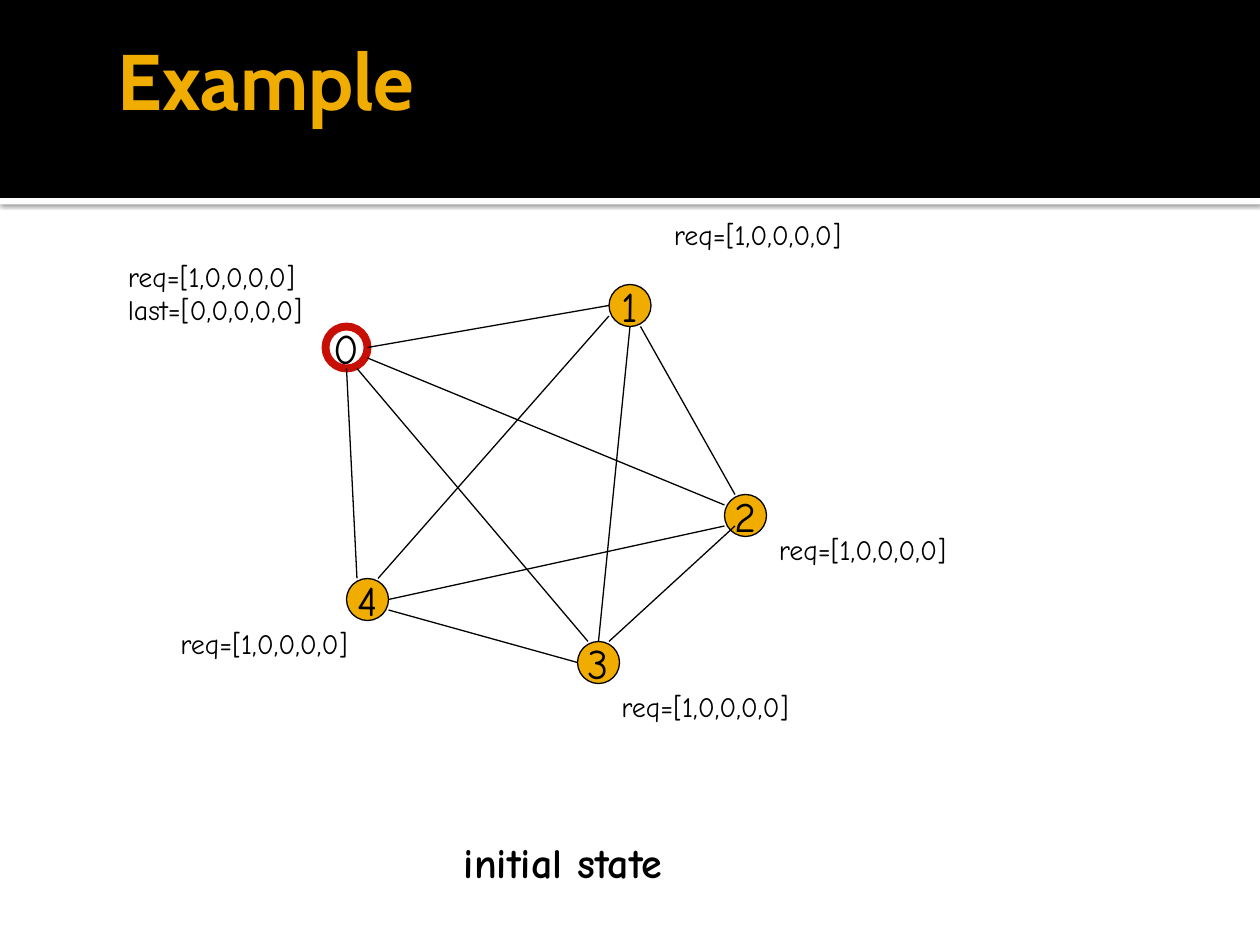
from lxml.etree import SubElement
from pptx import Presentation
from pptx.dml.color import RGBColor
from pptx.enum.shapes import MSO_CONNECTOR, MSO_SHAPE
from pptx.enum.text import MSO_ANCHOR, MSO_AUTO_SIZE, PP_ALIGN
from pptx.oxml.ns import qn
from pptx.util import Cm, Pt

COLORS = {"black": "000000", "white": "FFFFFF", "gold": "F0AD00", "red": "C70F05"}
STEP = 2.54 / 12  # drawing grid, in cm
DROP = 0.02       # the drawing sits slightly below the grid


def color(name):
    return RGBColor.from_string(COLORS[name])


def grid(column, row):
    return Cm(column * STEP), Cm(row * STEP + DROP)


class SlideBuilder:
    body_font = "Comic Neue"
    title_font = "Cabin"

    def __init__(self, page):
        self.page = page

    def add_lines(self, frame, lines, size, ink="black", align=PP_ALIGN.LEFT, **font_values):
        for index, line in enumerate(lines):
            para = frame.paragraphs[0] if index == 0 else frame.add_paragraph()
            para.alignment = align
            span = para.add_run()
            span.text = line
            span.font.color.rgb = color(ink)
            values = {"name": self.body_font, "size": Pt(size), **font_values}
            for name, value in values.items():
                setattr(span.font, name, value)

    def shape(self, kind, left, top, width, height, fill):
        shape = self.page.shapes.add_shape(kind, left, top, width, height)
        shape.shadow.inherit = False
        shape.line.fill.background()
        if fill:
            shape.fill.solid()
            shape.fill.fore_color.rgb = color(fill)
        else:
            shape.fill.background()
        return shape

    def band(self, top, height, fill):
        return self.shape(MSO_SHAPE.RECTANGLE, 0, Cm(top), Cm(25.4), Cm(height), fill)

    def drop_shadow(self, shape):
        effects = shape._element.spPr.find(qn("a:effectLst"))
        shadow = SubElement(effects, qn("a:outerShdw"), blurRad=str(Pt(2.5)),
                            dist=str(Pt(0.8)), dir="5400000", rotWithShape="0")
        ink = SubElement(shadow, qn("a:srgbClr"), val=COLORS["black"])
        SubElement(ink, qn("a:alpha"), val="60000")

    def node(self, name, column, row, fill="gold", outline="black", weight=0.75):
        side = Cm(4 * STEP)
        circle = self.shape(MSO_SHAPE.OVAL, *grid(column, row), side, side, fill)
        circle.line.color.rgb = color(outline)
        circle.line.width = Pt(weight)
        frame = circle.text_frame
        frame.word_wrap = False
        frame.vertical_anchor = MSO_ANCHOR.MIDDLE
        self.add_lines(frame, [name], 24, align=PP_ALIGN.CENTER)

    def edge(self, start, end):
        line = self.page.shapes.add_connector(
            MSO_CONNECTOR.STRAIGHT, *grid(*start), *grid(*end))
        line.line.color.rgb = color("black")
        line.line.width = Pt(0.75)
        SubElement(line._element.spPr, qn("a:effectLst"))

    def label(self, lines, column, row, width, height, size=16, wrap=False, **font_values):
        box = self.page.shapes.add_textbox(*grid(column, row), Cm(width), Cm(height))
        frame = box.text_frame
        frame.word_wrap = wrap
        frame.auto_size = MSO_AUTO_SIZE.SHAPE_TO_FIT_TEXT
        self.add_lines(frame, lines, size, **font_values)

    def title(self, text):
        box = self.page.shapes.add_textbox(Cm(2.12), 0, Cm(21.59), Cm(3.18))
        values = {"word_wrap": True, "vertical_anchor": MSO_ANCHOR.MIDDLE,
                  "margin_left": Cm(0.25), "margin_right": Cm(0.13),
                  "margin_top": Cm(0.13), "margin_bottom": Cm(0.13)}
        for name, value in values.items():
            setattr(box.text_frame, name, value)
        self.add_lines(box.text_frame, [text], 45, "gold", name=self.title_font, bold=True)


def main():
    deck = Presentation()
    deck.slide_width, deck.slide_height = Cm(25.4), Cm(19.05)
    slide = SlideBuilder(deck.slides.add_slide(deck.slide_layouts[6]))

    # Header
    slide.drop_shadow(slide.band(3.99, 0.13, "white"))
    slide.band(0, 3.99, "black")
    slide.title("Example")

    # Processes; process 0 holds the token
    slide.node("0", 31, 31, fill=None, outline="red", weight=4.5)
    for name, column, row in [("2", 69, 47), ("1", 58, 27), ("3", 55, 61), ("4", 33, 55)]:
        slide.node(name, column, row)

    # Links between every pair of processes
    for start, end in [
        ((35, 33), (58, 29)), ((61, 31), (70, 47)), ((70, 50), (58, 61)),
        ((55, 63), (37, 58)), ((34, 55), (33, 35)), ((35, 34), (69, 48)),
        ((34, 35), (56, 61)), ((60, 31), (57, 61)), ((58, 30), (36, 55)),
        ((69, 50), (37, 57)),
    ]:
        slide.edge(start, end)

    # Request and token arrays
    request = "req=[1,0,0,0,0]"
    slide.label([request, "last=[0,0,0,0,0]"], 11, 24, 4.55, 1.83)
    for column, row, height in [(63, 20, 1.83), (73, 50, 1.83), (58, 65, 1.83), (16, 59, 1.04)]:
        slide.label([request], column, row, 4.37, height)

    # Caption
    slide.label(["initial state"], 43, 79, 6.35, 1.45, size=24, wrap=True, bold=True)

    deck.save("out.pptx")


if __name__ == "__main__":
    main()
